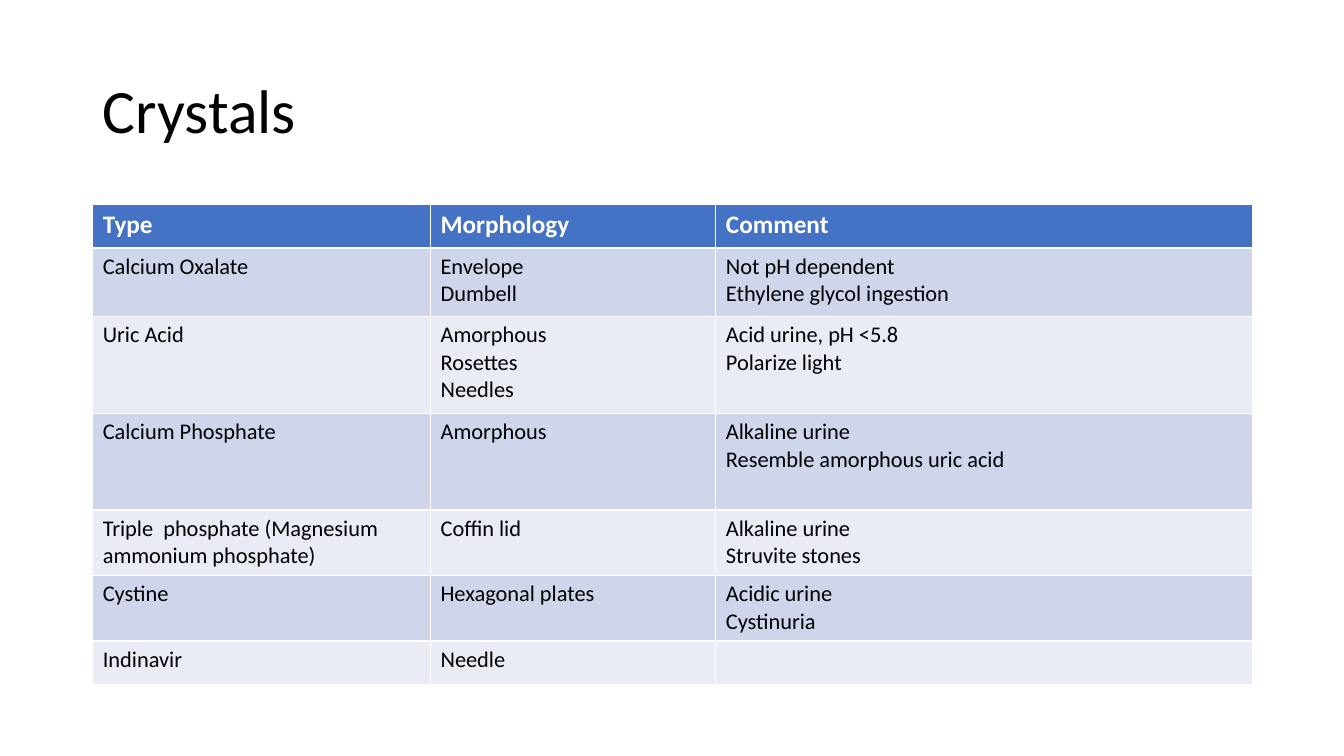
from pptx import Presentation
from pptx.dml.color import RGBColor
from pptx.enum.text import MSO_ANCHOR, MSO_AUTO_SIZE, PP_ALIGN
from pptx.util import Inches, Pt

LEFT, MIDDLE, NO_AUTOFIT = PP_ALIGN.LEFT, MSO_ANCHOR.MIDDLE, MSO_AUTO_SIZE.NONE
TITLE_ONLY = 5

HEADING = "Crystals"
CRYSTALS = [
    ("Type", "Morphology", "Comment"),
    ("Calcium Oxalate", "Envelope\nDumbell", "Not pH dependent\nEthylene glycol ingestion"),
    ("Uric Acid", "Amorphous\nRosettes\nNeedles", "Acid urine, pH <5.8\nPolarize light"),
    ("Calcium Phosphate", "Amorphous", "Alkaline urine\nResemble amorphous uric acid"),
    ("Triple  phosphate (Magnesium ammonium phosphate)", "Coffin lid",
     "Alkaline urine\nStruvite stones"),
    ("Cystine", "Hexagonal plates", "Acidic urine\nCystinuria"),
    ("Indinavir", "Needle", ""),
]
COLUMN_WIDTHS = (3.35, 2.83, 5.32)
ROW_HEIGHTS = (0.43, 0.68, 0.96, 0.96, 0.65, 0.65, 0.43)
MARGIN, TITLE_TOP, TITLE_HEIGHT, TABLE_TOP = 0.92, 0.4, 1.45, 2.03
CONTENT_WIDTH = sum(COLUMN_WIDTHS)
HEADER_FILL, BAND_FILLS = "4472C4", ("E9EBF5", "CFD5EA")
BLACK, WHITE = "000000", "FFFFFF"


def color(hex_code):
    return RGBColor.from_string(hex_code)


def format_text(frame, size, hex_code, bold=False):
    for paragraph in frame.paragraphs:
        paragraph.alignment = LEFT
        for run in paragraph.runs:
            run.font.name = "Calibri"
            run.font.size = Pt(size)
            run.font.bold = bold
            run.font.color.rgb = color(hex_code)


def add_heading(slide):
    title = slide.shapes.title
    title.left, title.top = Inches(MARGIN), Inches(TITLE_TOP)
    title.width, title.height = Inches(CONTENT_WIDTH), Inches(TITLE_HEIGHT)
    frame = title.text_frame
    frame.text = HEADING
    frame.auto_size = NO_AUTOFIT
    frame.vertical_anchor = MIDDLE
    frame.paragraphs[0].line_spacing = 0.9
    format_text(frame, 44, BLACK)


def add_crystal_table(slide):
    table = slide.shapes.add_table(
        len(CRYSTALS), len(COLUMN_WIDTHS), Inches(MARGIN), Inches(TABLE_TOP),
        Inches(CONTENT_WIDTH), Inches(sum(ROW_HEIGHTS))).table
    for column, width in zip(table.columns, COLUMN_WIDTHS):
        column.width = Inches(width)
    for row, height in zip(table.rows, ROW_HEIGHTS):
        row.height = Inches(height)
    for r, crystal in enumerate(CRYSTALS):
        is_header = r == 0
        for c, entry in enumerate(crystal):
            cell = table.cell(r, c)
            cell.text_frame.text = entry
            cell.fill.solid()
            cell.fill.fore_color.rgb = color(HEADER_FILL if is_header else BAND_FILLS[r % 2])
            format_text(cell.text_frame, 18 if is_header else 16,
                        WHITE if is_header else BLACK, is_header)


def main():
    deck = Presentation()
    deck.slide_width, deck.slide_height = Inches(13.33), Inches(7.5)
    slide = deck.slides.add_slide(deck.slide_layouts[TITLE_ONLY])
    add_heading(slide)
    add_crystal_table(slide)
    deck.save("out.pptx")


if __name__ == "__main__":
    main()
